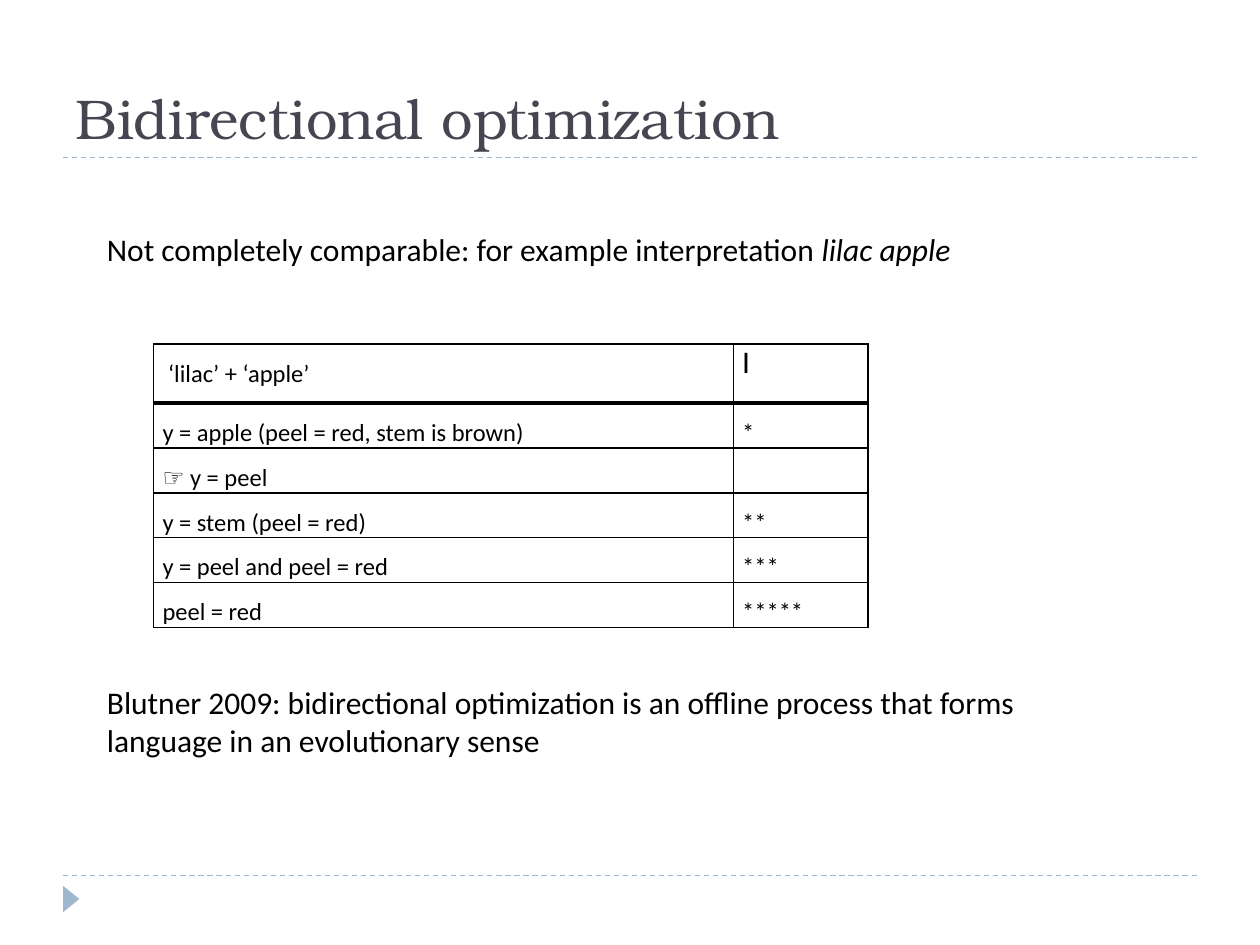
from lxml import etree
from pptx import Presentation
from pptx.dml.color import RGBColor
from pptx.enum import dml, shapes, text
from pptx.oxml import ns
from pptx.util import Inches, Pt

ACCENT, INK, BLACK = "9FB8CD", "464653", "000000"
ROWS = [
    (" ‘lilac’ + ‘apple’", "I"),
    ("y = apple (peel = red, stem is brown)", "*"),
    ("☞ y = peel", ""),
    ("y = stem (peel = red)", "**"),
    ("y = peel and peel = red", "***"),
    ("peel = red", "*****"),
]


def color(code):
    return RGBColor.from_string(code)


def style(para, size, font="Calibri", code=BLACK):
    for run in para.runs:
        run.font.size = Pt(size)
        run.font.name = font
        run.font.color.rgb = color(code)


def add_rule(slide, left, top, width):
    rule = slide.shapes.add_connector(
        shapes.MSO_CONNECTOR.STRAIGHT,
        Inches(left), Inches(top), Inches(left + width), Inches(top))
    rule.line.color.rgb = color(ACCENT)
    rule.line.width = Pt(0.75)
    rule.line.dash_style = dml.MSO_LINE.DASH
    etree.SubElement(rule._element.spPr, ns.qn("a:effectLst"))


def add_mark(slide, left, top, width, height):
    mark = slide.shapes.add_shape(
        shapes.MSO_SHAPE.ISOSCELES_TRIANGLE,
        Inches(left), Inches(top), Inches(width), Inches(height))
    mark.rotation = 90
    mark.shadow.inherit = False
    mark.fill.solid()
    mark.fill.fore_color.rgb = color(ACCENT)
    mark.line.fill.background()


def set_title(slide, left, top, width, height):
    title = slide.shapes.title
    title.left, title.top = Inches(left), Inches(top)
    title.width, title.height = Inches(width), Inches(height)
    frame = title.text_frame
    frame.text = "Bidirectional optimization"
    frame.vertical_anchor = text.MSO_ANCHOR.BOTTOM
    para = frame.paragraphs[0]
    para.alignment = text.PP_ALIGN.LEFT
    style(para, 32, "TeX Gyre Bonum", INK)


def add_border(cell, side, width):
    props = cell._tc.get_or_add_tcPr()
    line = etree.SubElement(props, ns.qn(f"a:ln{side}"), w=str(Pt(width)))
    fill = etree.SubElement(line, ns.qn("a:solidFill"))
    etree.SubElement(fill, ns.qn("a:srgbClr"), val=BLACK)


def fill_cell(cell, words, row, col):
    cell.margin_left = cell.margin_right = Inches(0.07)
    cell.margin_top = cell.margin_bottom = 0
    # Heavy rule between the header and the body
    for side in "LRTB":
        heavy = (row, side) in ((0, "B"), (1, "T"))
        add_border(cell, side, 3 if heavy else 1)
    cell.fill.background()
    cell.text_frame.text = words
    para = cell.text_frame.paragraphs[0]
    head = row == 0 and col == 1
    if not head:
        para.line_spacing = 1.5
    if col == 1 and row:
        para.alignment = text.PP_ALIGN.JUSTIFY
    style(para, 18 if head else 14)


def add_grid(slide, left, top, width, height):
    first, side = 0.47, 1.07
    table = slide.shapes.add_table(
        len(ROWS), 2, Inches(left), Inches(top),
        Inches(width), Inches(height)).table
    table.first_row = table.horz_banding = False
    table.columns[0].width = Inches(width - side)
    table.columns[1].width = Inches(side)
    for row, words in enumerate(ROWS):
        rest = (height - first) / (len(ROWS) - 1)
        table.rows[row].height = Inches(rest if row else first)
        for col, word in enumerate(words):
            fill_cell(table.cell(row, col), word, row, col)


def add_body(slide, left, top, width, height):
    frame = slide.shapes.add_textbox(
        Inches(left), Inches(top), Inches(width), Inches(height)).text_frame
    frame.word_wrap = True
    lead = frame.paragraphs[0]
    lead.text = "Not completely comparable: for example interpretation "
    term = lead.add_run()
    term.text = "lilac apple"
    term.font.italic = True
    # The gap leaves room for the table
    close = frame.add_paragraph()
    close.text = ("Blutner 2009: bidirectional optimization is an offline "
                  "process that forms language in an evolutionary sense")
    close.space_before = Pt(237)
    for para in frame.paragraphs:
        style(para, 18)


def main():
    deck = Presentation()
    deck.slide_width, deck.slide_height = Inches(10), Inches(7.5)
    slide = deck.slides.add_slide(deck.slide_layouts[5])
    # Frame of the page
    for top in (6.95, 1.25):
        add_rule(slide, 0.5, top, 9)
    add_mark(slide, 0.46, 7.07, 0.21, 0.13)
    # Content
    set_title(slide, 0.5, 0.17, 9, 1.08)
    add_grid(slide, 1.22, 2.73, 5.67, 2.25)
    add_body(slide, 0.75, 1.78, 8.28, 4.34)
    deck.save("out.pptx")


if __name__ == "__main__":
    main()
